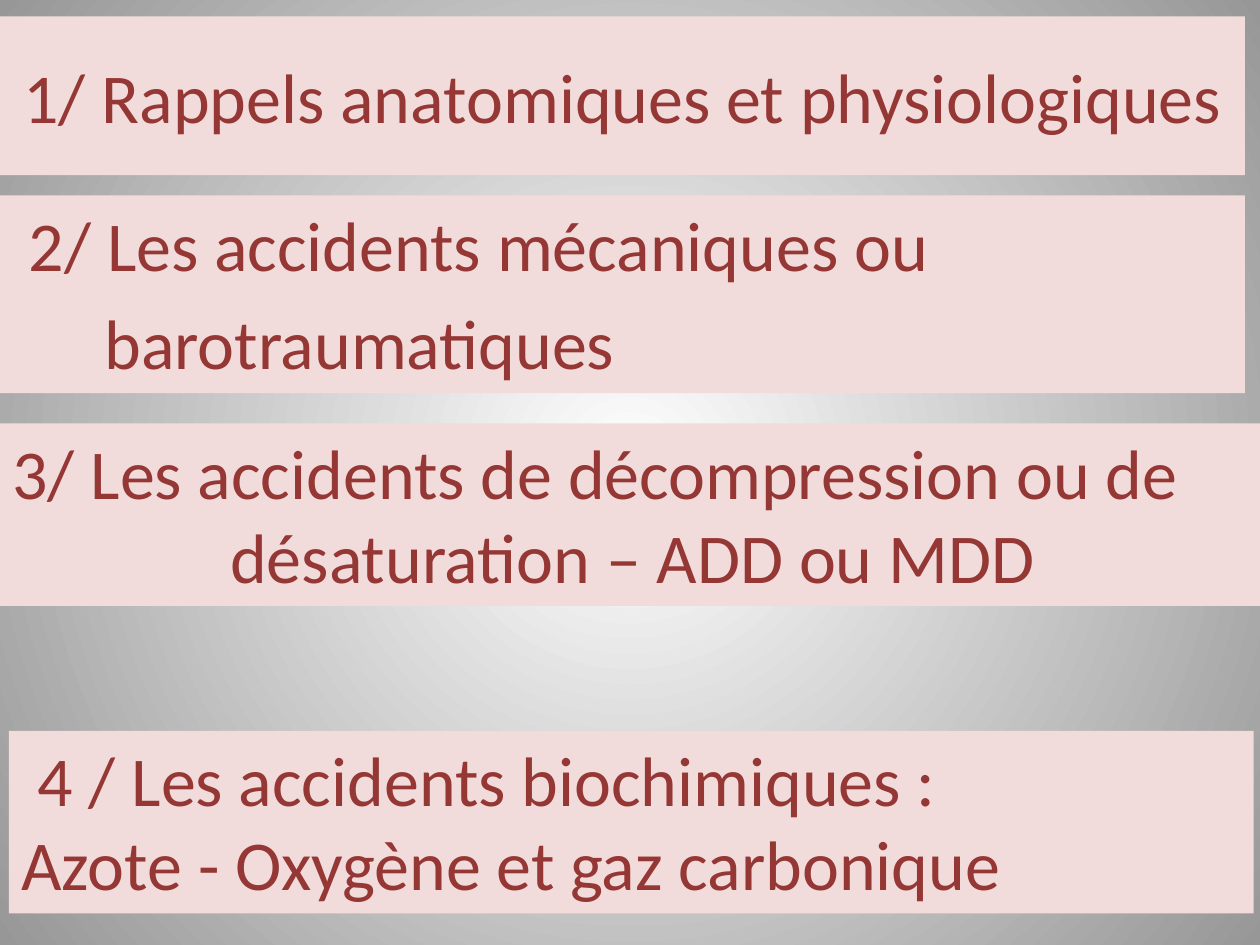
import pptx
import pptx.dml.color
import pptx.enum.shapes
import pptx.enum.text
import pptx.oxml
import pptx.oxml.ns
import pptx.util
from pptx.util import Inches

WHITE = pptx.dml.color.RGBColor(0xFF, 0xFF, 0xFF)
GREY = pptx.dml.color.RGBColor(0x97, 0x97, 0x97)
PINK = pptx.dml.color.RGBColor(0xF2, 0xDC, 0xDB)
DARK_RED = pptx.dml.color.RGBColor(0x95, 0x37, 0x35)

ANCHOR = pptx.enum.text.MSO_ANCHOR
ALIGN = pptx.enum.text.PP_ALIGN
FONT_FORMAT = {"name": "Calibri", "size": pptx.util.Pt(40)}

SECTIONS = [
    {"box": (0, 0.13, 9.88, 1.26), "anchor": ANCHOR.MIDDLE, "align": ALIGN.CENTER,
     "lines": [("1/ Rappels anatomiques et physiologiques", 0)]},
    {"box": (0, 1.55, 9.88, 1.57), "gap": 8,
     "lines": [("2/ Les accidents mécaniques ou", 0.13), ("barotraumatiques", 0.73)]},
    {"box": (0, 3.36, 10, 1.45),
     "lines": [("3/ Les accidents de décompression ou de", 0),
               ("désaturation – ADD ou MDD", 1.73)]},
    {"box": (0.07, 5.8, 9.88, 1.45),
     "lines": [("4 / Les accidents biochimiques :", 0.13),
               ("Azote - Oxygène et gaz carbonique", 0)]},
]


def paint_background(slide):
    """Fill the slide with a circular gradient, white at the centre."""
    fill = slide.background.fill
    fill.gradient()
    for stop, color, position in zip(fill.gradient_stops, (WHITE, GREY), (0, 1)):
        stop.color.rgb = color
        stop.position = position
    linear = slide.element.find(".//" + pptx.oxml.ns.qn("a:lin"))
    circle = pptx.oxml.parse_xml(
        f'<a:path {pptx.oxml.ns.nsdecls("a")} path="circle">'
        '<a:fillToRect l="50000" t="50000" r="50000" b="50000"/></a:path>')
    linear.getparent().replace(linear, circle)


def add_section(slide, box, lines, anchor=ANCHOR.TOP, align=ALIGN.LEFT, gap=0):
    """Place one pink band with its indented lines of text."""
    shape = slide.shapes.add_shape(
        pptx.enum.shapes.MSO_SHAPE.RECTANGLE, *(Inches(value) for value in box))
    shape.shadow.inherit = False
    shape.fill.solid()
    shape.fill.fore_color.rgb = PINK
    shape.line.fill.background()
    frame = shape.text_frame
    for name, value in {"word_wrap": True, "vertical_anchor": anchor}.items():
        setattr(frame, name, value)
    for index, (text, indent) in enumerate(lines):
        paragraph = frame.add_paragraph() if index else frame.paragraphs[0]
        paragraph.text = text
        paragraph.alignment = align
        paragraph.space_before = pptx.util.Pt(gap if index else 0)
        paragraph._p.get_or_add_pPr().set("marL", str(Inches(indent)))
        font = paragraph.runs[0].font
        for name, value in FONT_FORMAT.items():
            setattr(font, name, value)
        font.color.rgb = DARK_RED


def main():
    """Build the outline slide and save it."""
    presentation = pptx.Presentation()
    presentation.slide_width = Inches(10)
    presentation.slide_height = Inches(7.5)
    slide = presentation.slides.add_slide(presentation.slide_layouts[6])
    paint_background(slide)
    for section in SECTIONS:
        add_section(slide, **section)
    presentation.save("out.pptx")


if __name__ == "__main__":
    main()
